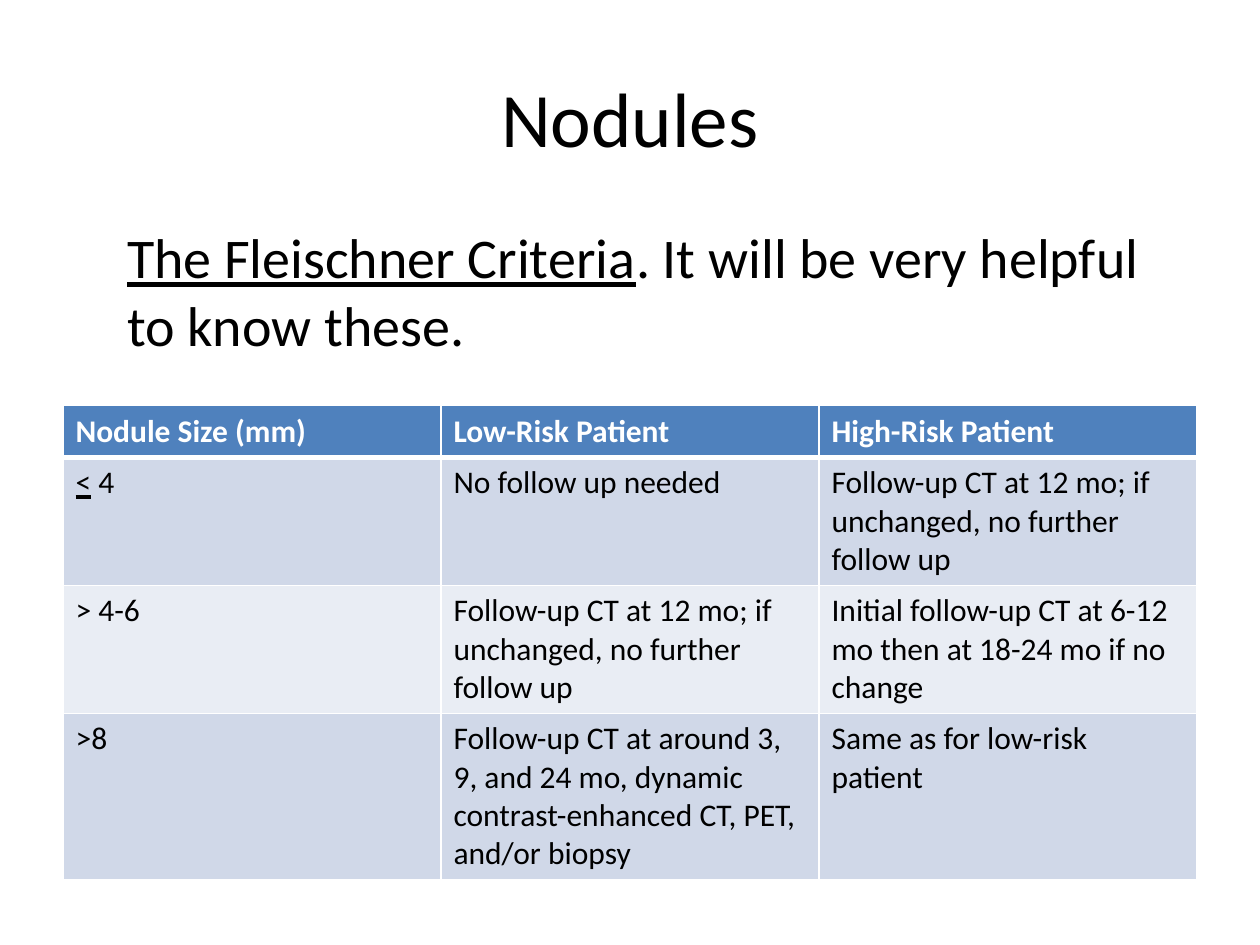
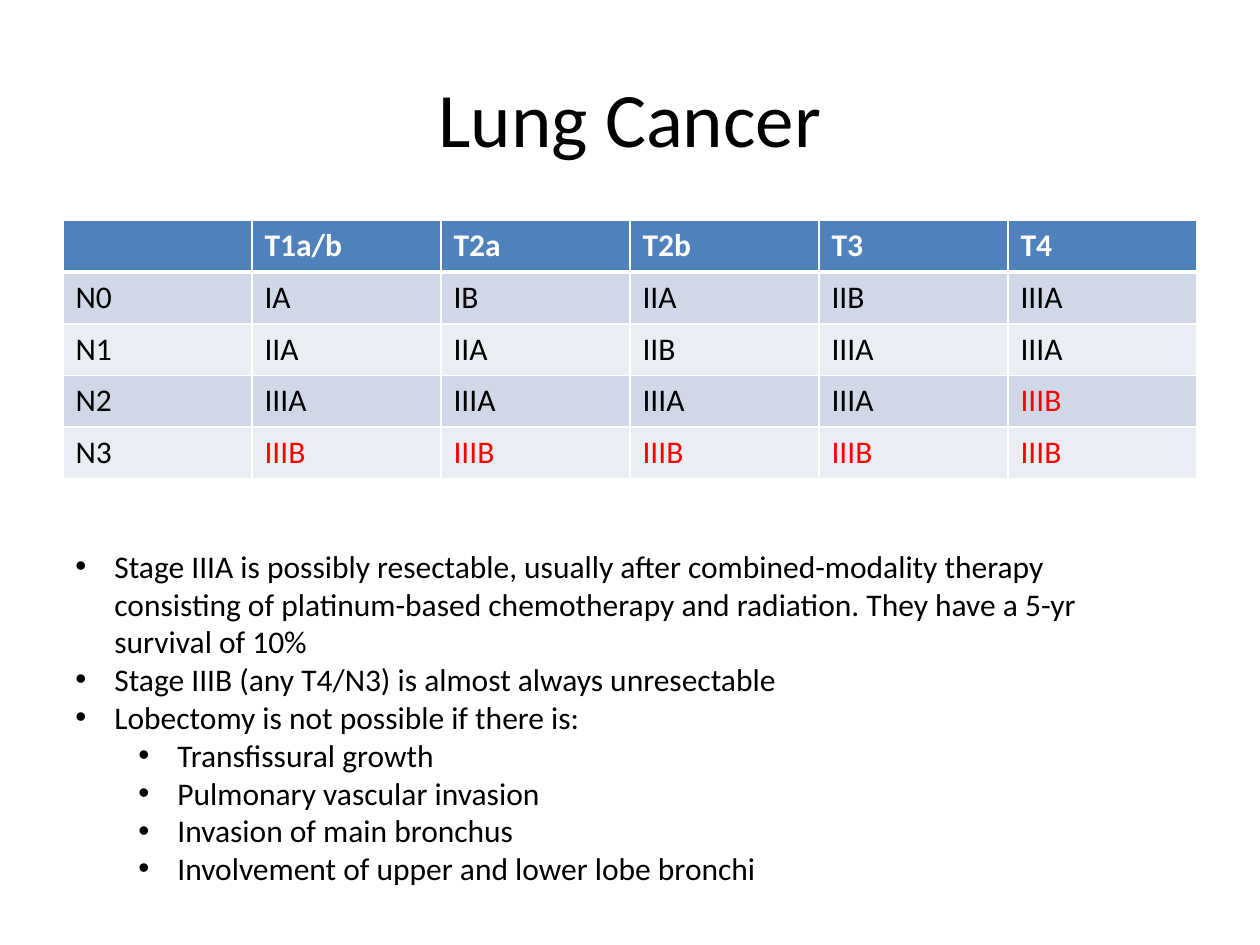
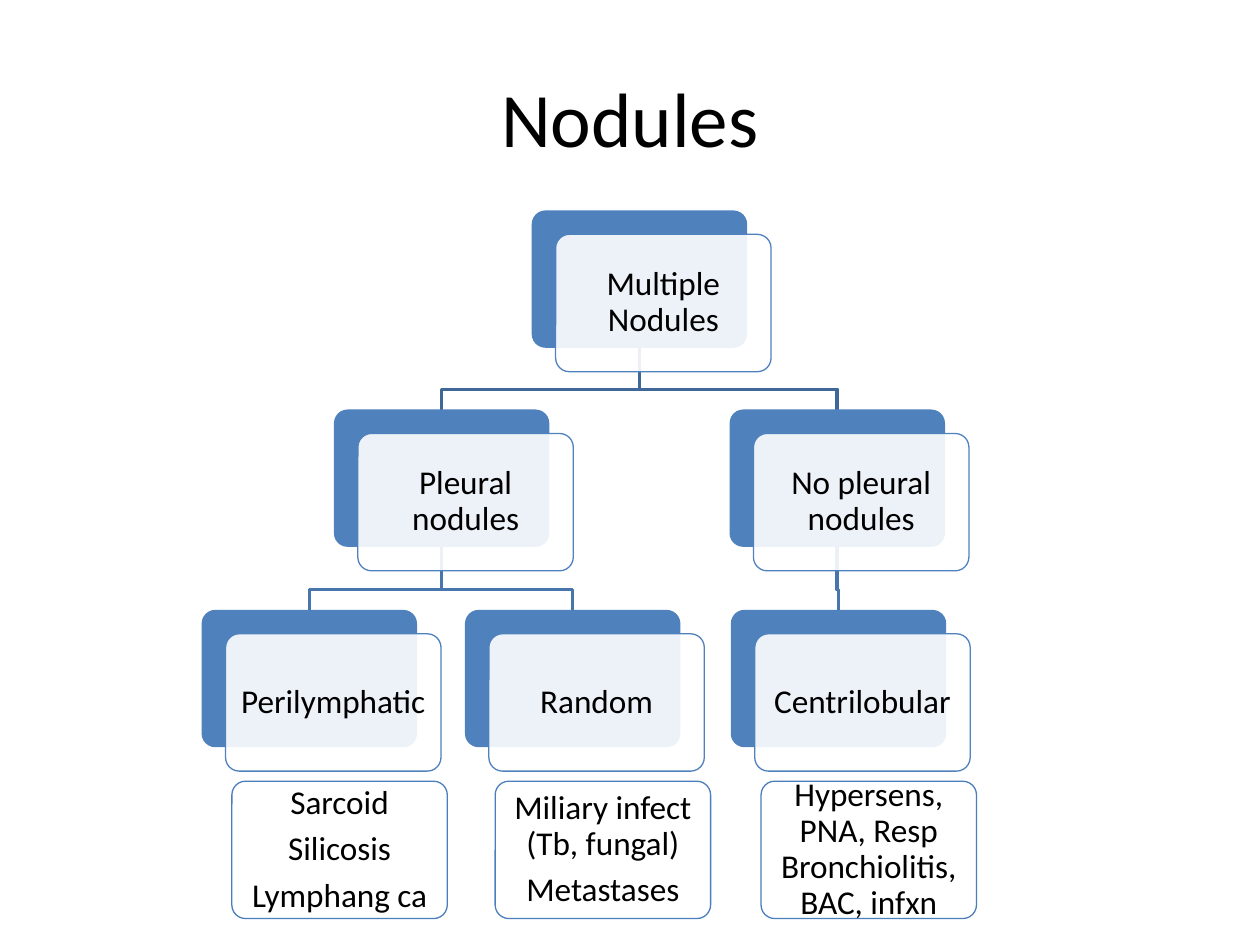
"""Build three slides on lung nodules and lung cancer staging."""
import pptx
import pptx.util
import pptx.dml.color
import pptx.enum.shapes
import pptx.enum.text
import pptx.oxml
import pptx.oxml.ns

Inches, Pt = pptx.util.Inches, pptx.util.Pt
RGB = pptx.dml.color.RGBColor.from_string
SHAPE = pptx.enum.shapes.MSO_SHAPE
ALIGN = pptx.enum.text.PP_ALIGN
ANCHOR = pptx.enum.text.MSO_ANCHOR
NS = pptx.oxml.ns.nsdecls("a")
C = {"text": "000000", "white": "FFFFFF", "blue": "4F81BD", "red": "FF0000",
     "band": "D0D8E8", "pale": "E9EDF4", "trunk": "3F6797", "branch": "4875AC",
     "note": "4B7EBC"}
FONT = "Calibri"
LEFT, WIDTH, ROW = 0.5, 9, 0.41


def write(tf, paragraphs, size=18, color="text", bold=False, align=None, line=None, after=None):
    """Fill a text frame; a paragraph is a string or a list of (text, underline) runs."""
    tf.word_wrap = True
    for i, runs in enumerate(paragraphs):
        p = tf.paragraphs[0] if i == 0 else tf.add_paragraph()
        p.alignment, p.line_spacing, p.space_after = align, line, after
        for words, underline in [(runs, None)] if isinstance(runs, str) else runs:
            r = p.add_run()
            r.text = words
            r.font.name, r.font.size, r.font.bold = FONT, Pt(size), bold
            r.font.underline = underline
            r.font.color.rgb = RGB(C[color])


def add_grid(s, top, heights, rows):
    """Add a full-width table with a blue header, banded rows and white rules."""
    shape = s.shapes.add_table(len(rows), len(rows[0]), Inches(LEFT), Inches(top),
                               Inches(WIDTH), Inches(sum(heights)))
    table = shape.table
    table.horz_banding = False
    for r, (height, row) in enumerate(zip(heights, rows)):
        table.rows[r].height = Inches(height)
        for c, value in enumerate(row):
            cell = table.cell(r, c)
            cell.fill.solid()
            cell.fill.fore_color.rgb = RGB(C["blue" if r == 0 else "band" if r % 2 else "pale"])
            if value:
                color = "white" if r == 0 else "red" if value == "IIIB" else "text"
                write(cell.text_frame, [value], color=color, bold=r == 0)
            widths = {"lnL": 1, "lnR": 1, "lnT": 3 if r == 1 else 1, "lnB": 3 if r == 0 else 1}
            for i, (side, width) in enumerate(widths.items()):
                cell._tc.get_or_add_tcPr().insert(i, pptx.oxml.parse_xml(
                    f'<a:{side} {NS} w="{Pt(width)}"><a:solidFill>'
                    f'<a:srgbClr val="{C["white"]}"/></a:solidFill></a:{side}>'))


prs = pptx.Presentation()
prs.slide_width, prs.slide_height = Inches(10), Inches(7.5)
slides = []
for title in ["Nodules", "Lung Cancer", "Nodules"]:
    s = prs.slides.add_slide(prs.slide_layouts[5])
    sp = s.shapes.title
    sp.left, sp.top, sp.width, sp.height = Inches(LEFT), Inches(0.3), Inches(WIDTH), Inches(1.25)
    sp.text_frame.vertical_anchor = ANCHOR.MIDDLE
    write(sp.text_frame, [title], size=44, align=ALIGN.CENTER)
    slides.append(s)
criteria, staging, tree = slides

add_grid(criteria, 3.22, [ROW, 1, 1, 1.3], [
    ["Nodule Size (mm)", "Low-Risk Patient", "High-Risk Patient"],
    [[("<", True), (" 4", None)], "No follow up needed",
     "Follow-up CT at 12 mo; if unchanged, no further follow up"],
    ["> 4-6", "Follow-up CT at 12 mo; if unchanged, no further follow up",
     "Initial follow-up CT at 6-12 mo then at 18-24 mo if no change"],
    [">8", "Follow-up CT at around 3, 9, and 24 mo, dynamic contrast-enhanced CT, PET, "
     "and/or biopsy", "Same as for low-risk patient"]])
sp = criteria.shapes.add_textbox(Inches(0.91), Inches(1.72), Inches(8.42), Inches(1.18))
write(sp.text_frame, [[("The Fleischner Criteria", True),
                       (". It will be very helpful to know these.", None)]], size=32)

add_grid(staging, 1.75, [ROW] * 5, [
    ["", "T1a/b", "T2a", "T2b", "T3", "T4"],
    ["N0", "IA", "IB", "IIA", "IIB", "IIIA"],
    ["N1", "IIA", "IIA", "IIB", "IIIA", "IIIA"],
    ["N2", "IIIA", "IIIA", "IIIA", "IIIA", "IIIB"],
    ["N3"] + ["IIIB"] * 5])
points = [
    (0, "Stage IIIA is possibly resectable, usually after combined-modality therapy consisting "
        "of platinum-based chemotherapy and radiation. They have a 5-yr survival of 10%"),
    (0, "Stage IIIB (any T4/N3) is almost always unresectable"),
    (0, "Lobectomy is not possible if there is:"),
    (1, "Transfissural growth"),
    (1, "Pulmonary vascular invasion"),
    (1, "Invasion of main bronchus"),
    (1, "Involvement of upper and lower lobe bronchi")]
sp = staging.shapes.add_textbox(Inches(LEFT), Inches(4.29), Inches(8.26), Inches(2.83))
write(sp.text_frame, [words for level, words in points])
for p, (level, words) in zip(sp.text_frame.paragraphs, points):
    p.level = level
    pPr = p._p.get_or_add_pPr()
    pPr.set("marL", str(Inches(0.31 + 0.5 * level)))
    pPr.set("indent", str(Inches(-0.31)))
    pPr.append(pptx.oxml.parse_xml(f'<a:buFont {NS} typeface="Arial"/>'))
    pPr.append(pptx.oxml.parse_xml(f'<a:buChar {NS} char="•"/>'))

BOX_W, BOX_H, SHIFT = 1.71, 1.09, 0.19
TOPS = [1.67, 3.25, 4.84]
nodes = {"Multiple Nodules": (4.22, 0, None),
         "Pleural nodules": (2.65, 1, "Multiple Nodules"),
         "Perilymphatic": (1.6, 2, "Pleural nodules"),
         "Random": (3.69, 2, "Pleural nodules"),
         "No pleural nodules": (5.79, 1, "Multiple Nodules"),
         "Centrilobular": (5.8, 2, "No pleural nodules")}
notes = {"Perilymphatic": ["Sarcoid", "Silicosis", "Lymphang ca"],
         "Random": ["Miliary infect (Tb, fungal)", "Metastases"],
         "Centrilobular": ["Hypersens, PNA, Resp Bronchiolitis, BAC, infxn"]}

for x, level, parent in nodes.values():
    if parent:
        start, end = nodes[parent][0] + BOX_W / 2, x + BOX_W / 2
        top, bottom = TOPS[level - 1] + BOX_H, TOPS[level]
        bend = bottom - 0.16
        fb = tree.shapes.build_freeform(Inches(start), Inches(top))
        fb.add_line_segments([(Inches(a), Inches(b)) for a, b in
                              [(start, bend), (end, bend), (end, bottom)]], close=False)
        sp = fb.convert_to_shape()
        sp.shadow.inherit = False
        sp.fill.background()
        sp.line.color.rgb = RGB(C["trunk" if level == 1 else "branch"])
        sp.line.width = Pt(2)

boxes = []
for name, (x, level, parent) in nodes.items():
    boxes.append((x, TOPS[level], None, None))
    boxes.append((x + SHIFT, TOPS[level] + SHIFT, [name], "blue"))
boxes += [(nodes[name][0] + 0.24, 6.2, lines, "note") for name, lines in notes.items()]
for x, y, lines, outline in boxes:
    sp = tree.shapes.add_shape(SHAPE.ROUNDED_RECTANGLE, Inches(x), Inches(y),
                               Inches(BOX_W), Inches(BOX_H))
    sp.adjustments[0] = 0.1
    sp.shadow.inherit = False
    sp.fill.solid()
    sp.fill.fore_color.rgb = RGB(C["white" if lines else "blue"])
    if not lines:
        sp.line.fill.background()
        continue
    sp.fill._xPr.find(".//" + pptx.oxml.ns.qn("a:srgbClr")).append(
        pptx.oxml.parse_xml(f'<a:alpha {NS} val="90000"/>'))
    sp.line.color.rgb = RGB(C[outline])
    sp.line.width = Pt(0.75)
    tf = sp.text_frame
    tf.margin_left = tf.margin_right = tf.margin_top = tf.margin_bottom = Inches(0.08)
    tf.vertical_anchor = ANCHOR.MIDDLE
    write(tf, lines, size=19, align=ALIGN.CENTER, line=0.9, after=Pt(6))

prs.save("out.pptx")
